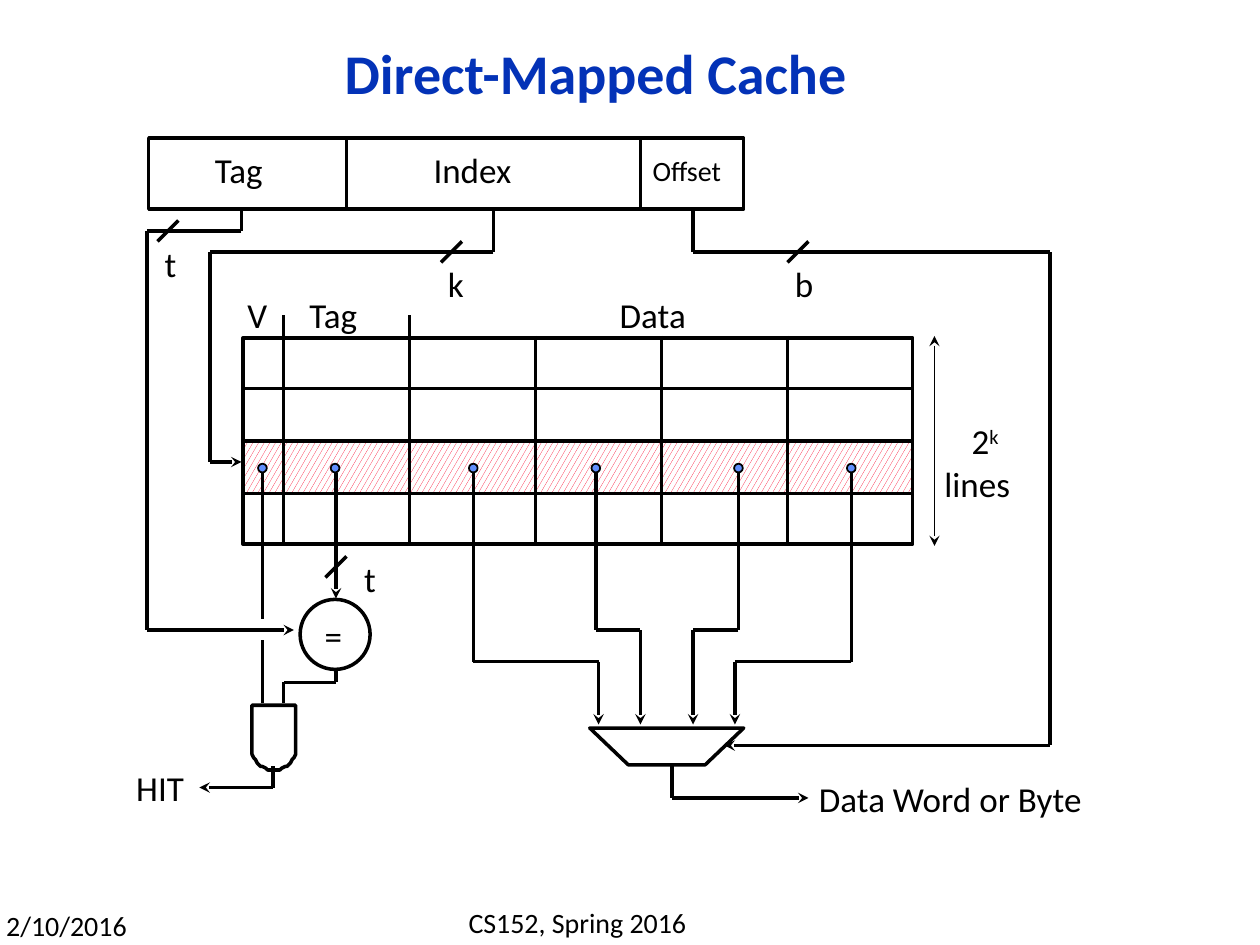
from itertools import pairwise
from math import cos, pi, sin

from lxml.etree import SubElement
from pptx import Presentation
from pptx.dml.color import RGBColor
from pptx.enum.dml import MSO_PATTERN
from pptx.enum.shapes import MSO_CONNECTOR, MSO_SHAPE
from pptx.enum.text import MSO_ANCHOR, PP_ALIGN
from pptx.oxml.ns import qn
from pptx.util import Pt

BLACK, WHITE, BLUE, RED, DOT = "000000", "FFFFFF", "0332B7", "FC0128", "618FFD"
FONT = "Calibri"

# Text, centre x, centre y, size
LABELS = [
    ("Tag", 136.5, 97, 20), ("Index", 270, 97, 20), ("Offset", 392.5, 97.5, 16),
    ("V", 147, 180, 20), ("Tag", 190.5, 180, 20), ("Data", 373, 180, 20),
    ("t", 97.5, 150.5, 20), ("k", 260.5, 162, 20), ("b", 459.5, 162, 20),
    ("t", 211.5, 330.5, 20), ("=", 190.5, 363, 20),
    ("HIT", 91.5, 450, 20), ("Data Word or Byte", 543, 456.5, 20),
    ("2/10/2016", 38, 528.5, 16), ("CS152, Spring 2016", 330, 527, 16),
]

# Address fields and cache array
ADDRESS = (85, 79, 340, 40.5)
FIELD_EDGES = [198, 366]
ARRAY = (139, 193, 382.5, 118)
ROW_EDGES = [222, 252, 282]
COLUMN_EDGES = [(162, 180), (234, 180), (306, 192), (378, 192), (450, 192)]
SELECTED_ROW = (138.5, 252.5, 383, 29)

# Corner points of each wire, and whether it ends in an arrow
WIRES = [
    ([(138, 120), (138, 132), (84, 132), (84, 360), (168, 360)], True),   # tag
    ([(282, 120), (282, 144), (120, 144), (120, 264), (138, 264)], True),  # index
    ([(396, 120), (396, 144), (600, 144), (600, 426), (414, 426)], True),  # offset
    ([(150, 270), (150, 354)], False),                                     # valid
    ([(150, 366), (150, 402)], False),
    ([(192, 270), (192, 342)], True),                                      # stored tag
    ([(192, 382), (192, 390), (162, 390), (162, 402)], False),             # match
    ([(156, 438), (156, 450), (114, 450)], True),                          # hit
    ([(270.5, 270), (270.5, 378), (342, 378), (342, 414)], True),          # data words
    ([(340.5, 270), (340.5, 360), (366, 360), (366, 414)], True),
    ([(422, 270), (422, 360), (396, 360), (396, 414)], True),
    ([(486.5, 270), (486.5, 378), (420, 378), (420, 414)], True),
    ([(384, 438), (384, 456), (462, 456)], True),                          # output
]
TAPS = [150, 191.5, 270.5, 340.5, 422, 486.5]
BUS_MARKS = [(96, 132), (258, 144), (456, 144), (192, 324)]
MUX = [(337, 415.5), (359, 437), (403, 437), (425, 415.5)]
ARC = [(156.5 - 12.5 * cos(pi * i / 24), 428.5 + 11.5 * sin(pi * i / 24))
       for i in range(25)]
AND_GATE = [(144, 403), *ARC, (169, 403)]

prs = Presentation()
prs.slide_width, prs.slide_height = Pt(720), Pt(540)
s = prs.slides.add_slide(prs.slide_layouts[6])


def rgb(color):
    return RGBColor.from_string(color)


def style(sp, fill=None, width=2):
    sp.shadow.inherit = False
    if fill:
        sp.fill.solid()
        sp.fill.fore_color.rgb = rgb(fill)
    else:
        sp.fill.background()
    sp.line.color.rgb = rgb(BLACK)
    sp.line.width = Pt(width)
    return sp


def shape(kind, box, fill=None, width=2):
    return style(s.shapes.add_shape(kind, *map(Pt, box)), fill, width)


def polygon(points, fill=None):
    fb = s.shapes.build_freeform(*points[0], scale=Pt(1))
    fb.add_line_segments(points[1:], close=True)
    return style(fb.convert_to_shape(), fill)


def line(start, end, width=2, arrows=()):
    c = s.shapes.add_connector(MSO_CONNECTOR.STRAIGHT, *map(Pt, (*start, *end)))
    c.line.color.rgb = rgb(BLACK)
    c.line.width = Pt(width)
    for name in arrows:
        SubElement(c.line._get_or_add_ln(), qn(f"a:{name}")).set("type", "stealth")
    SubElement(c._element.spPr, qn("a:effectLst"))


def text(content, x, y, size, w=180, h=30, color=BLACK, bold=False):
    """Place text centred on (x, y)."""
    sp = s.shapes.add_textbox(Pt(x - w / 2), Pt(y - h / 2), Pt(w), Pt(h))
    tf = sp.text_frame
    tf.margin_left = tf.margin_right = tf.margin_top = tf.margin_bottom = 0
    tf.word_wrap = True
    tf.vertical_anchor = MSO_ANCHOR.MIDDLE
    tf.text = content
    for p in tf.paragraphs:
        p.alignment = PP_ALIGN.CENTER
        for r in p.runs:
            r.font.name, r.font.size, r.font.bold = FONT, Pt(size), bold
            r.font.color.rgb = rgb(color)
    return tf


# Selected row, under the grid
row = shape(MSO_SHAPE.RECTANGLE, SELECTED_ROW, width=1)
row.fill.patterned()
row.fill.pattern = MSO_PATTERN.LARGE_CONFETTI
row.fill.fore_color.rgb, row.fill.back_color.rgb = rgb(RED), rgb(WHITE)

# Address and cache array
shape(MSO_SHAPE.RECTANGLE, ADDRESS)
for x in FIELD_EDGES:
    line((x, 78), (x, 120))
shape(MSO_SHAPE.RECTANGLE, ARRAY)
for y in ROW_EDGES:
    line((138, y), (522, y))
for x, top in COLUMN_EDGES:
    line((x, top), (x, 312))

# Comparator, gate and multiplexer
shape(MSO_SHAPE.OVAL, (171.5, 342.5, 40, 40), WHITE)
polygon(AND_GATE)
polygon(MUX, WHITE)

# Wires, bus marks and taps
for points, arrow in WIRES:
    for start, end in pairwise(points):
        line(start, end, arrows=["tailEnd"] if arrow and end == points[-1] else ())
for x, y in BUS_MARKS:
    line((x + 6, y - 6), (x - 6, y + 6))
for x in TAPS:
    shape(MSO_SHAPE.OVAL, (x - 2.5, 265, 5, 5), DOT, 1)

# Title and labels
text("Direct-Mapped Cache", 340.5, 41.5, 32, 574, 58, BLUE, True)
for label in LABELS:
    text(*label)

# Height of the array
line((534, 192), (534, 312), 1, ["headEnd", "tailEnd"])
tf = text("2\nlines", 558.5, 264, 20, 52, 56)
p = tf.paragraphs[0]
p._p.get_or_add_pPr().set("marL", str(Pt(9)))
r = p.add_run()
r.text = "k"
r.font.name, r.font.size = FONT, Pt(20)
r.font.color.rgb = rgb(BLACK)
r.font._element.set("baseline", "30000")

prs.save("out.pptx")
